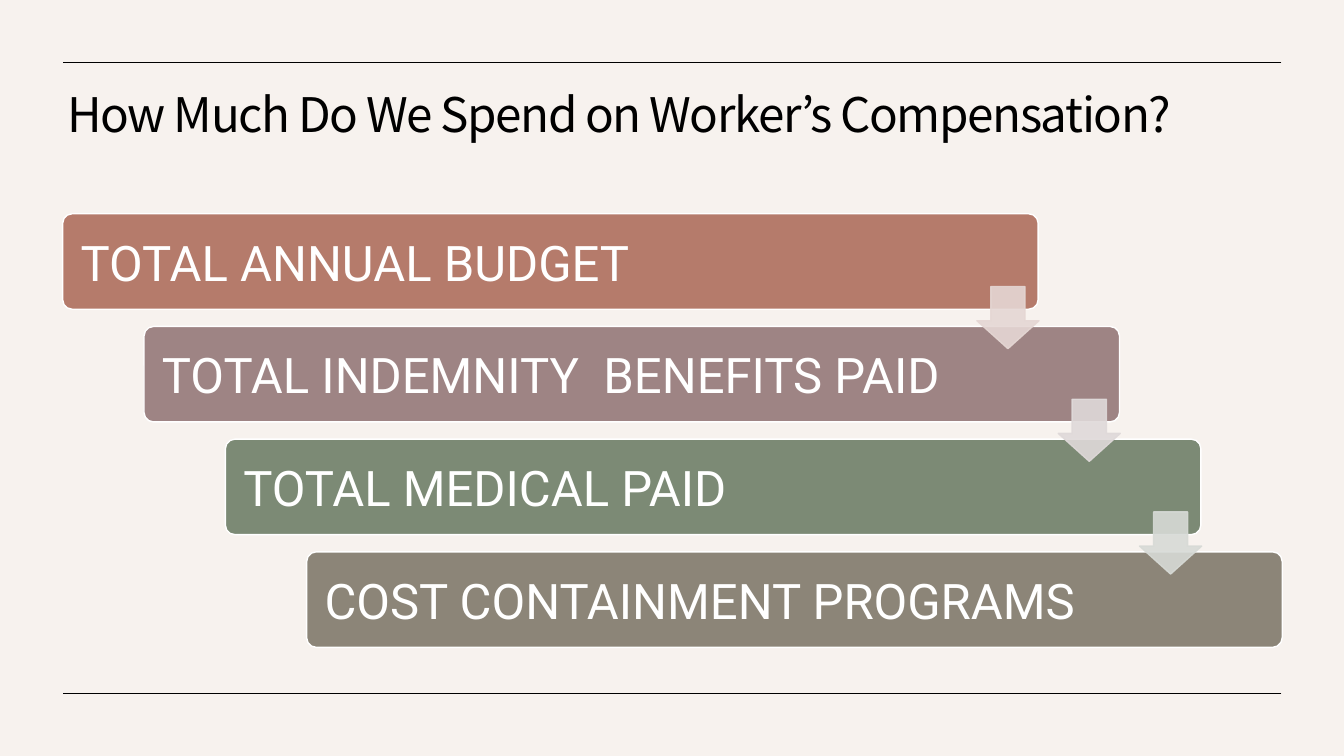
from lxml.etree import SubElement
from pptx import Presentation
from pptx.dml.color import RGBColor
from pptx.enum.shapes import MSO_CONNECTOR, MSO_SHAPE
from pptx.enum.text import MSO_ANCHOR, MSO_AUTO_SIZE, PP_ALIGN
from pptx.oxml.ns import qn
from pptx.util import Pt

COLORS = {
    "background": "F7F2EE",
    "ink": "000000",
    "white": "FFFFFF",
    "budget": "B57B6B",
    "indemnity": "9E8484",
    "medical": "7C8A75",
    "containment": "8C8578",
    "budget arrow": "E5D7D4",
    "indemnity arrow": "DFD9D9",
    "medical arrow": "D7DAD6",
}
STEPS = [
    ("budget", "TOTAL ANNUAL BUDGET"),
    ("indemnity", "TOTAL INDEMNITY  BENEFITS PAID"),
    ("medical", "TOTAL MEDICAL PAID"),
    ("containment", "COST CONTAINMENT PROGRAMS"),
]
LEFT, RIGHT = 44.8, 915.2
FIRST_TOP, STEP_X, STEP_Y = 152.7, 58.1, 80.5
BAR_WIDTH, BAR_HEIGHT = 696.8, 68.2
ARROW_SIZE, ARROW_X, ARROW_Y = 44.4, 653, 52
TITLE_FORMAT = {"name": "Noto Sans CJK KR", "size": Pt(34), "bold": False}
STEP_FORMAT = {"name": "Roboto", "size": Pt(35), "bold": False}
TITLE_FRAME = {
    "word_wrap": True,
    "auto_size": MSO_AUTO_SIZE.NONE,
    "vertical_anchor": MSO_ANCHOR.TOP,
}
STEP_FRAME = {
    "word_wrap": True,
    "vertical_anchor": MSO_ANCHOR.MIDDLE,
    "margin_left": Pt(10.8),
    "margin_right": Pt(10.8),
    "margin_top": Pt(10.8),
    "margin_bottom": Pt(10.8),
}


def write(frame, text, color, align, frame_format, font_format):
    for key, value in frame_format.items():
        setattr(frame, key, value)
    paragraph = frame.paragraphs[0]
    paragraph.alignment = align
    run = paragraph.add_run()
    run.text = text
    for key, value in font_format.items():
        setattr(run.font, key, value)
    run.font.color.rgb = RGBColor.from_string(COLORS[color])
    return paragraph, run


def add_block(kind, left, top, width, height, fill, line, adjustments):
    block = slide.shapes.add_shape(kind, Pt(left), Pt(top), Pt(width), Pt(height))
    block.shadow.inherit = False
    block.fill.solid()
    block.fill.fore_color.rgb = RGBColor.from_string(COLORS[fill])
    block.line.color.rgb = RGBColor.from_string(COLORS[line])
    block.line.width = Pt(1)
    for index, value in enumerate(adjustments):
        block.adjustments[index] = value
    return block


deck = Presentation()
deck.slide_width, deck.slide_height = Pt(960), Pt(540)
slide = deck.slides.add_slide(deck.slide_layouts[5])
slide.background.fill.solid()
slide.background.fill.fore_color.rgb = RGBColor.from_string(COLORS["background"])

title = slide.shapes.title
title.left, title.top, title.width, title.height = Pt(41), Pt(62), Pt(875), Pt(87.5)
heading, heading_run = write(
    title.text_frame, "How Much Do We Spend on Worker’s Compensation?",
    "ink", PP_ALIGN.LEFT, TITLE_FRAME, TITLE_FORMAT,
)
heading.line_spacing = 0.9
heading_run.font._element.set("spc", "-100")

for rule_y in (44.6, 495.2):
    rule = slide.shapes.add_connector(
        MSO_CONNECTOR.STRAIGHT, Pt(RIGHT), Pt(rule_y), Pt(LEFT), Pt(rule_y)
    )
    rule.line.color.rgb = RGBColor.from_string(COLORS["ink"])
    rule.line.width = Pt(0.5)
    SubElement(rule._element.spPr, qn("a:effectLst"))

for index, (topic, label) in enumerate(STEPS):
    bar = add_block(
        MSO_SHAPE.ROUNDED_RECTANGLE, LEFT + index * STEP_X, FIRST_TOP + index * STEP_Y,
        BAR_WIDTH, BAR_HEIGHT, topic, "white", [0.1],
    )
    write(bar.text_frame, label, "white", PP_ALIGN.LEFT, STEP_FRAME, STEP_FORMAT)

for index, (topic, label) in enumerate(STEPS[:-1]):
    tint = f"{topic} arrow"
    arrow = add_block(
        MSO_SHAPE.DOWN_ARROW, LEFT + ARROW_X + index * STEP_X,
        FIRST_TOP + ARROW_Y + index * STEP_Y, ARROW_SIZE, ARROW_SIZE,
        tint, tint, [0.55, 0.45],
    )
    for color in arrow._element.spPr.iter(qn("a:srgbClr")):
        SubElement(color, qn("a:alpha"), val="90000")

deck.save("out.pptx")
